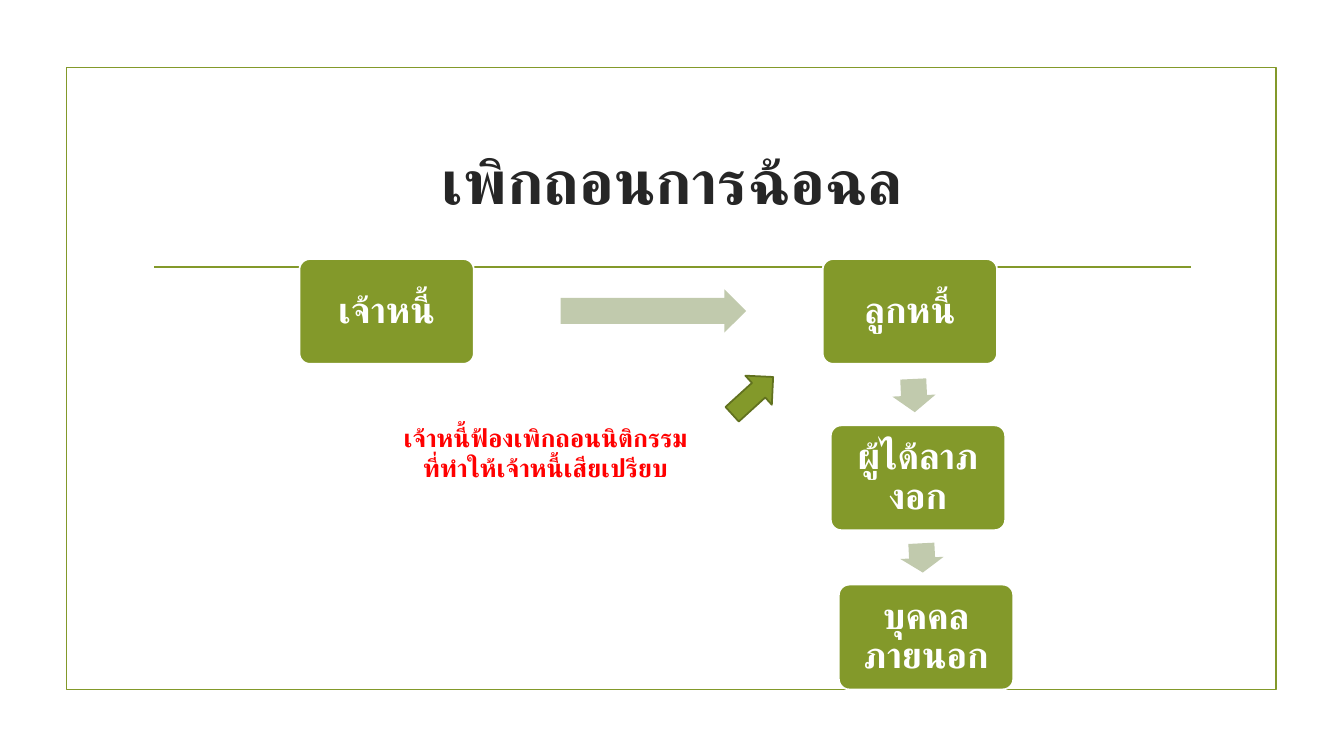
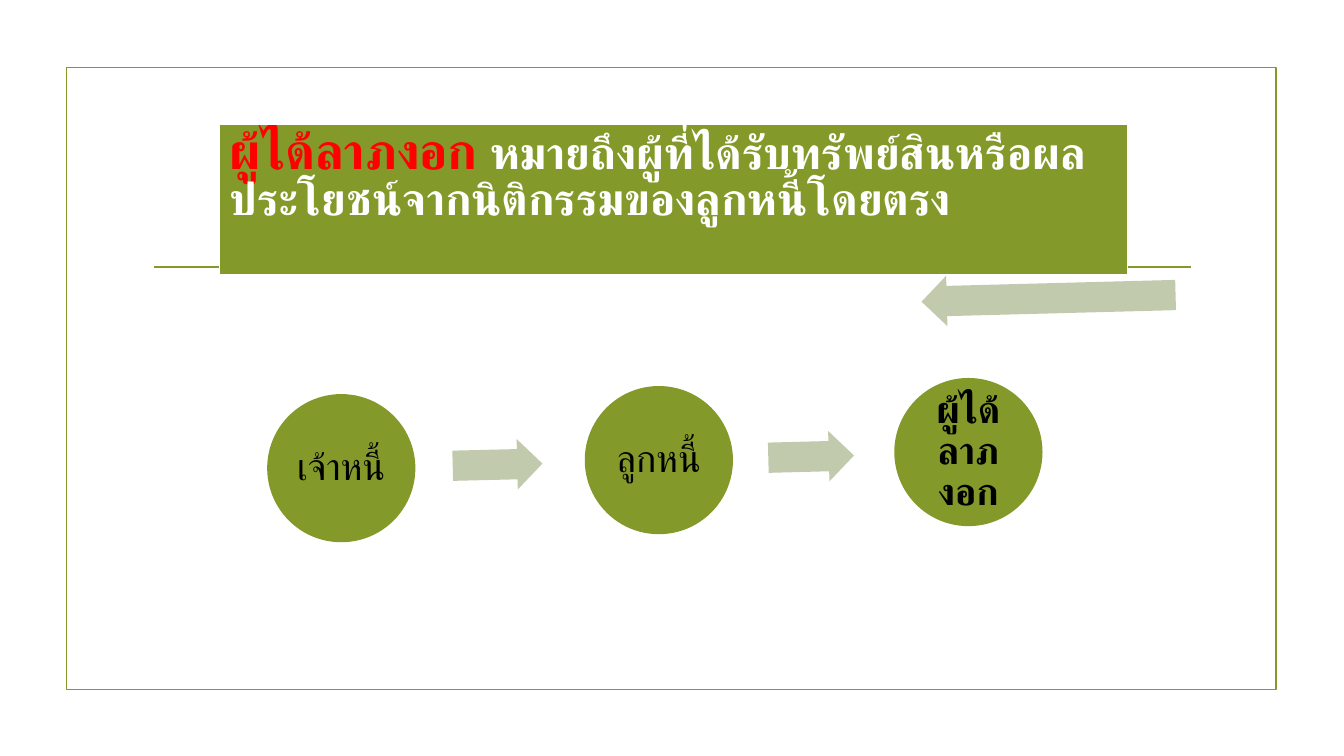
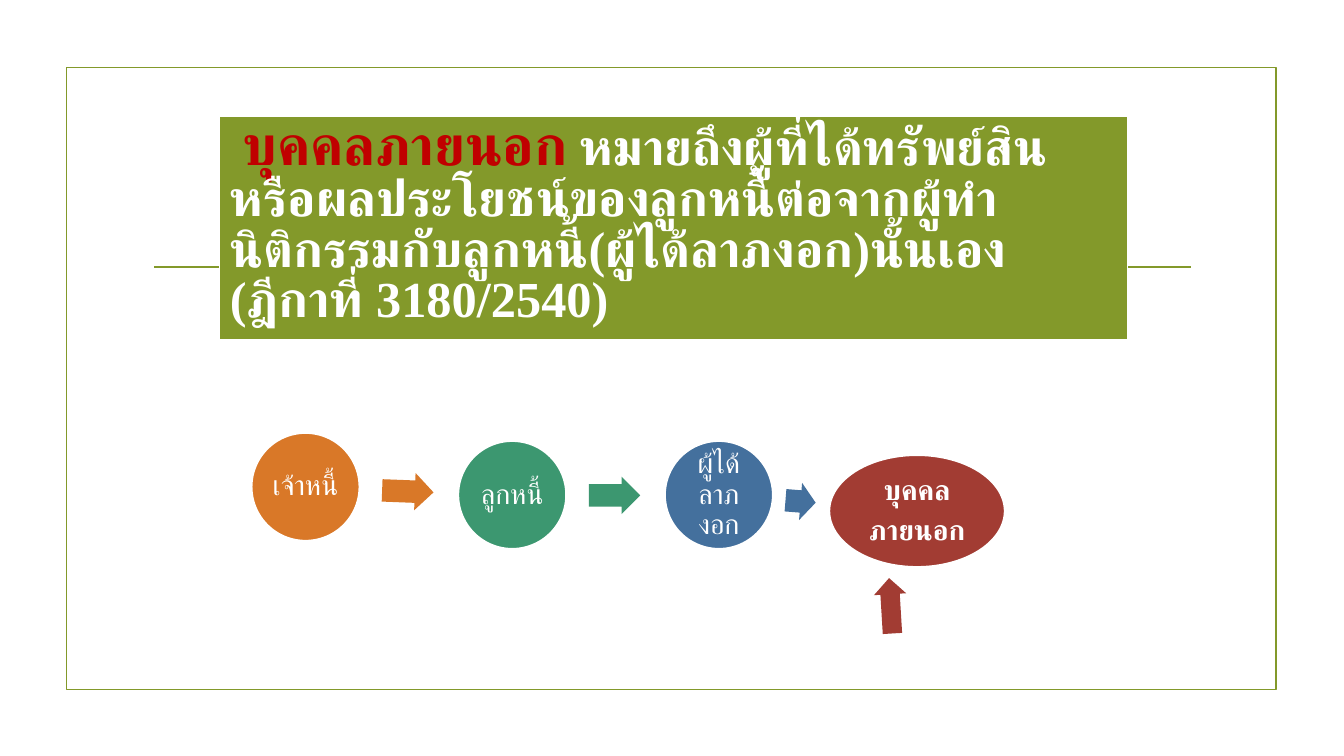
import pptx
import pptx.util
import pptx.dml.color
import pptx.enum.dml
import pptx.enum.lang
import pptx.enum.shapes
import pptx.enum.text
import pptx.oxml
import pptx.oxml.ns

Inches = pptx.util.Inches
Pt = pptx.util.Pt
RGBColor = pptx.dml.color.RGBColor
SHAPE = pptx.enum.shapes.MSO_SHAPE
ALIGN = pptx.enum.text.PP_ALIGN
MIDDLE = pptx.enum.text.MSO_ANCHOR.MIDDLE
THAI = pptx.enum.lang.MSO_LANGUAGE_ID.THAI
qn = pptx.oxml.ns.qn

OLIVE = RGBColor(0x83, 0x99, 0x2A)
DARK_OLIVE = RGBColor(0x61, 0x71, 0x1F)
SAGE = RGBColor(0xC1, 0xCA, 0xAD)
ORANGE = RGBColor(0xD9, 0x78, 0x28)
GREEN = RGBColor(0x3C, 0x97, 0x70)
BLUE = RGBColor(0x44, 0x70, 0x9D)
BRICK = RGBColor(0xA2, 0x3C, 0x33)
RED = RGBColor(0xFF, 0x00, 0x00)
DEEP_RED = RGBColor(0xC0, 0x00, 0x00)
INK = RGBColor(0x26, 0x26, 0x26)
BLACK = RGBColor(0x00, 0x00, 0x00)
WHITE = RGBColor(0xFF, 0xFF, 0xFF)
FONT = "Times New Roman"

CREDITOR = "เจ้าหนี้"
DEBTOR = "ลูกหนี้"
BENEFICIARY = "ผู้ได้ลาภงอก"


def add_run(p, text, size, color, bold=False):
    r = p.add_run()
    r.text = text
    style = {"name": FONT, "size": Pt(size), "bold": bold, "language_id": THAI}
    for key, value in style.items():
        setattr(r.font, key, value)
    r.font.color.rgb = color
    cs = pptx.oxml.parse_xml(
        f'<a:cs {pptx.oxml.ns.nsdecls("a")} typeface="{FONT}"/>')
    r.font._element.find(qn("a:latin")).addnext(cs)


def add_shape(s, kind, at, fill=None, line=None, width=1.25, rot=0, adj=()):
    sp = s.shapes.add_shape(kind, *map(Inches, at))
    sp.shadow.inherit = False
    sp.rotation = rot
    for i, value in enumerate(adj):
        sp.adjustments[i] = value
    if fill is None:
        sp.fill.background()
    else:
        sp.fill.solid()
        sp.fill.fore_color.rgb = fill
    if line is None:
        sp.line.fill.background()
    else:
        sp.line.color.rgb = line
        sp.line.width = Pt(width)
    return sp


def add_master_frame(prs, s):
    frame = add_shape(s, SHAPE.RECTANGLE, (0.66, 0.67, 12, 6.17), line=OLIVE)
    rule = s.shapes.add_connector(
        pptx.enum.shapes.MSO_CONNECTOR.STRAIGHT,
        Inches(1.53), Inches(2.65), Inches(11.81), Inches(2.65))
    rule.line.color.rgb = OLIVE
    rule.line.width = Pt(1.25)
    rule._element.spPr.append(pptx.oxml.parse_xml(
        f'<a:effectLst {pptx.oxml.ns.nsdecls("a")}/>'))
    tree = prs.slide_master.shapes.element
    for i, sp in enumerate((frame, rule)):
        sp._element.xpath(".//p:cNvPr")[0].set("id", str(101 + i))
        tree.insert(2 + i, sp._element)


def add_title(s, at, text):
    sp = s.shapes.title
    for key, value in zip(("left", "top", "width", "height"), at):
        setattr(sp, key, Inches(value))
    tf = sp.text_frame
    tf.vertical_anchor = MIDDLE
    tf.auto_size = pptx.enum.text.MSO_AUTO_SIZE.NONE
    tf.paragraphs[0].alignment = ALIGN.CENTER
    add_run(tf.paragraphs[0], text, 44, INK, True)


def add_note(s, at, lines):
    tf = s.shapes.add_textbox(*map(Inches, at)).text_frame
    tf.word_wrap = True
    for i, text in enumerate(lines):
        p = tf.add_paragraph() if i else tf.paragraphs[0]
        p.alignment = ALIGN.CENTER
        add_run(p, text, 18, RED, True)


def add_node(s, kind, at, text, size, inset, color=WHITE, bold=False, **look):
    sp = add_shape(s, kind, at, **look)
    tf = sp.text_frame
    tf.word_wrap = True
    tf.vertical_anchor = MIDDLE
    for side in ("left", "top", "right", "bottom"):
        setattr(tf, f"margin_{side}", Inches(inset))
    lines = text.split("\n")
    for i, line in enumerate(lines):
        p = tf.add_paragraph() if i else tf.paragraphs[0]
        p.alignment = ALIGN.CENTER
        p.line_spacing = 0.9
        if i < len(lines) - 1:
            p.space_after = Pt(0.35 * size)
        add_run(p, line, size, color, bold)


def add_arrow(s, at, fill, rot=0):
    add_shape(s, SHAPE.RIGHT_ARROW, at, fill, rot=rot, adj=(0.6, 0.5))


def add_definition(s, at, runs):
    table = s.shapes.add_table(1, 1, *map(Inches, at)).table
    table.first_row = False
    table.horz_banding = False
    cell = table.cell(0, 0)
    p = cell.text_frame.paragraphs[0]
    p.line_spacing = 0.9
    for text, size, color in runs:
        add_run(p, text, size, color, True)
    pr = cell._tc.get_or_add_tcPr()
    for side, width in (("L", 1), ("R", 1), ("T", 1), ("B", 3)):
        pr.append(pptx.oxml.parse_xml(
            f'<a:ln{side} {pptx.oxml.ns.nsdecls("a")} w="{Pt(width)}">'
            f'<a:solidFill><a:srgbClr val="{WHITE}"/></a:solidFill>'
            f'</a:ln{side}>'))
    cell.fill.solid()
    cell.fill.fore_color.rgb = OLIVE


def add_revocation_flow(s, x, y):
    nodes = [(0, 0, CREDITOR), (5.19, 0, DEBTOR),
             (5.27, 1.65, BENEFICIARY), (5.35, 3.23, "บุคคลภายนอก")]
    arrows = [(2.59, 0.3, 1.84, 0), (5.93, 1.14, 0.33, 87.3),
              (6.03, 2.75, 0.29, 87.1)]
    for dx, dy, text in nodes:
        add_node(s, SHAPE.ROUNDED_RECTANGLE, (x + dx, y + dy, 1.73, 1.04),
                 text, 26, 0.11, bold=True, fill=OLIVE, line=WHITE, adj=(0.1,))
    for dx, dy, w, rot in arrows:
        add_arrow(s, (x + dx, y + dy, w, 0.43), SAGE, rot)


def add_beneficiary_flow(s, x, y):
    nodes = [(0, 1.2, CREDITOR, False), (3.15, 1.12, DEBTOR, False),
             (6.22, 1.04, BENEFICIARY, True)]
    arrows = [(1.84, 1.65, 0.89, 358.6), (4.97, 1.57, 0.85, 358.5),
              (6.49, 0, 2.52, 178.5)]
    for dx, dy, text, bold in nodes:
        add_node(s, SHAPE.OVAL, (x + dx, y + dy, 1.47, 1.47), text, 27, 0.04,
                 color=BLACK, bold=bold, fill=OLIVE)
    for dx, dy, w, rot in arrows:
        add_arrow(s, (x + dx, y + dy, w, 0.5), SAGE, rot)


def add_outsider_flow(s, x, y):
    steps = [
        ((0, 0, 1.08, 1.08), CREDITOR, ORANGE, (1.3, 0.4, 0.51, 0.37), 2.2),
        ((2.05, 0.08, 1.08, 1.08), DEBTOR, GREEN, (3.35, 0.44, 0.51, 0.37), 0),
        ((4.1, 0.08, 1.08, 1.08), BENEFICIARY, BLUE,
         (5.3, 0.5, 0.3, 0.37), 4.6),
        ((5.73, 0.22, 1.75, 1.12), "บุคคล\nภายนอก", BRICK,
         (6.07, 1.56, 0.55, 0.32), 266.5),
    ]
    for (dx, dy, w, h), text, fill, (ax, ay, aw, ah), rot in steps:
        add_node(s, SHAPE.OVAL, (x + dx, y + dy, w, h), text, 20, 0.03,
                 bold=fill == BRICK, fill=fill, line=WHITE, width=2)
        add_arrow(s, (x + ax, y + ay, aw, ah), fill, rot)


def main():
    prs = pptx.Presentation()
    prs.slide_width = Inches(13.33)
    prs.slide_height = Inches(7.5)
    title_only, blank = prs.slide_layouts[5], prs.slide_layouts[6]

    s = prs.slides.add_slide(title_only)
    add_master_frame(prs, s)
    add_title(s, (1.42, 1.07, 10.5, 1.43), "เพิกถอนการฉ้อฉล")
    add_revocation_flow(s, 2.97, 2.57)
    add_shape(s, SHAPE.RIGHT_ARROW, (7.19, 3.73, 0.55, 0.39), OLIVE,
              DARK_OLIVE, rot=317.7)
    add_note(s, (3.6, 4.14, 3.62, 0.71),
             ["เจ้าหนี้ฟ้องเพิกถอนนิติกรรม", "ที่ทำให้เจ้าหนี้เสียเปรียบ"])

    s = prs.slides.add_slide(blank)
    add_definition(s, (2.18, 1.23, 9, 1.51), [
        ("ผู้ได้ลาภงอก ", 36, RED),
        ("หมายถึงผู้ที่ได้รับทรัพย์สินหรือผลประโยชน์จากนิติกรรมของลูกหนี้โดยตรง",
         32, WHITE)])
    add_beneficiary_flow(s, 2.65, 2.71)

    s = prs.slides.add_slide(blank)
    add_definition(s, (2.18, 1.15, 9, 2.23), [
        (" ", 36, WHITE),
        ("บุคคลภายนอก", 40, DEEP_RED),
        (" หมายถึงผู้ที่ได้ทรัพย์สินหรือผลประโยชน์ของลูกหนี้ต่อจาก"
         "ผู้ทำนิติกรรมกับลูกหนี้(ผู้ได้ลาภงอก)นั้นเอง (ฎีกาที่ 3180/2540)",
         36, WHITE)])
    add_outsider_flow(s, 2.49, 4.29)

    prs.save("out.pptx")


if __name__ == "__main__":
    main()
